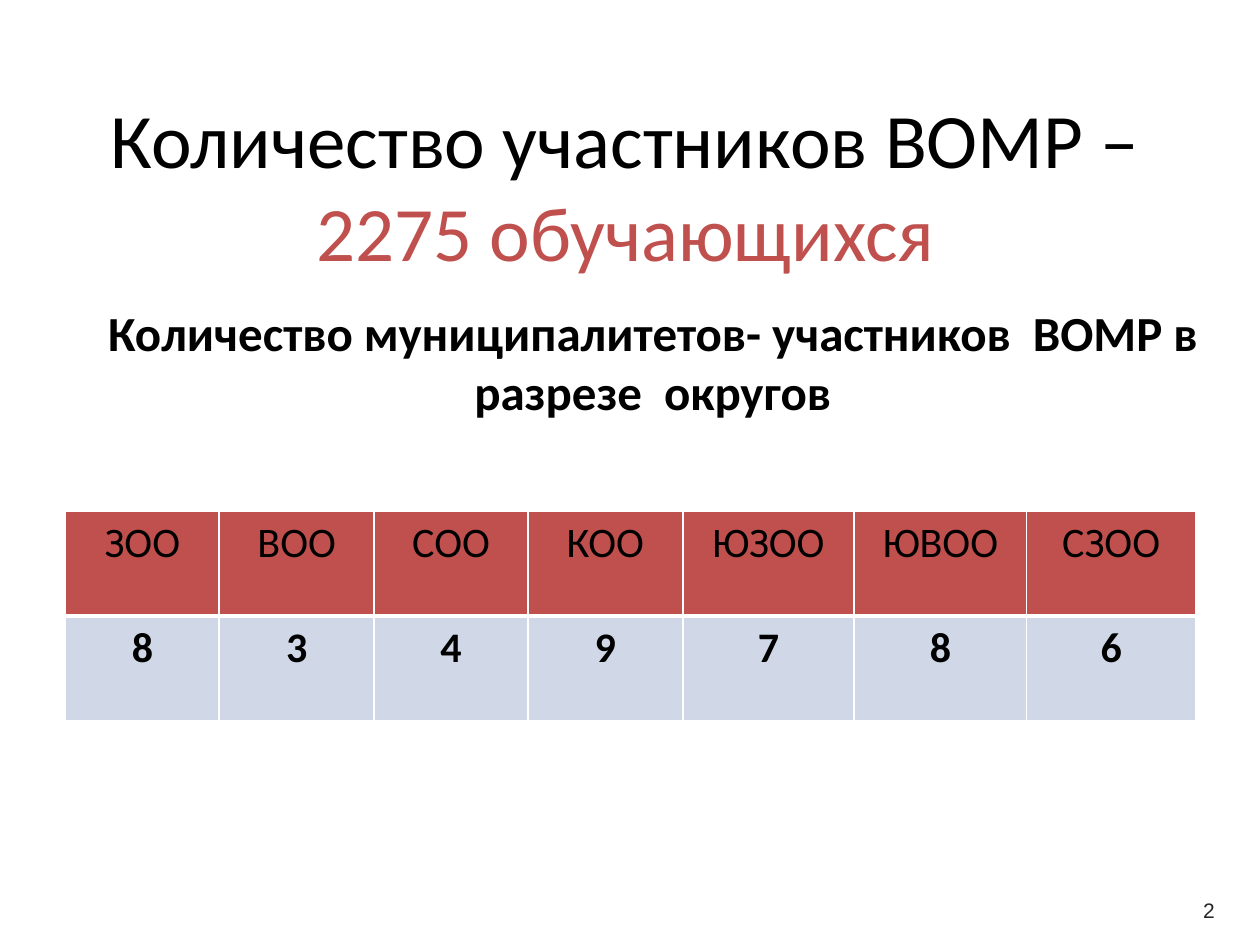
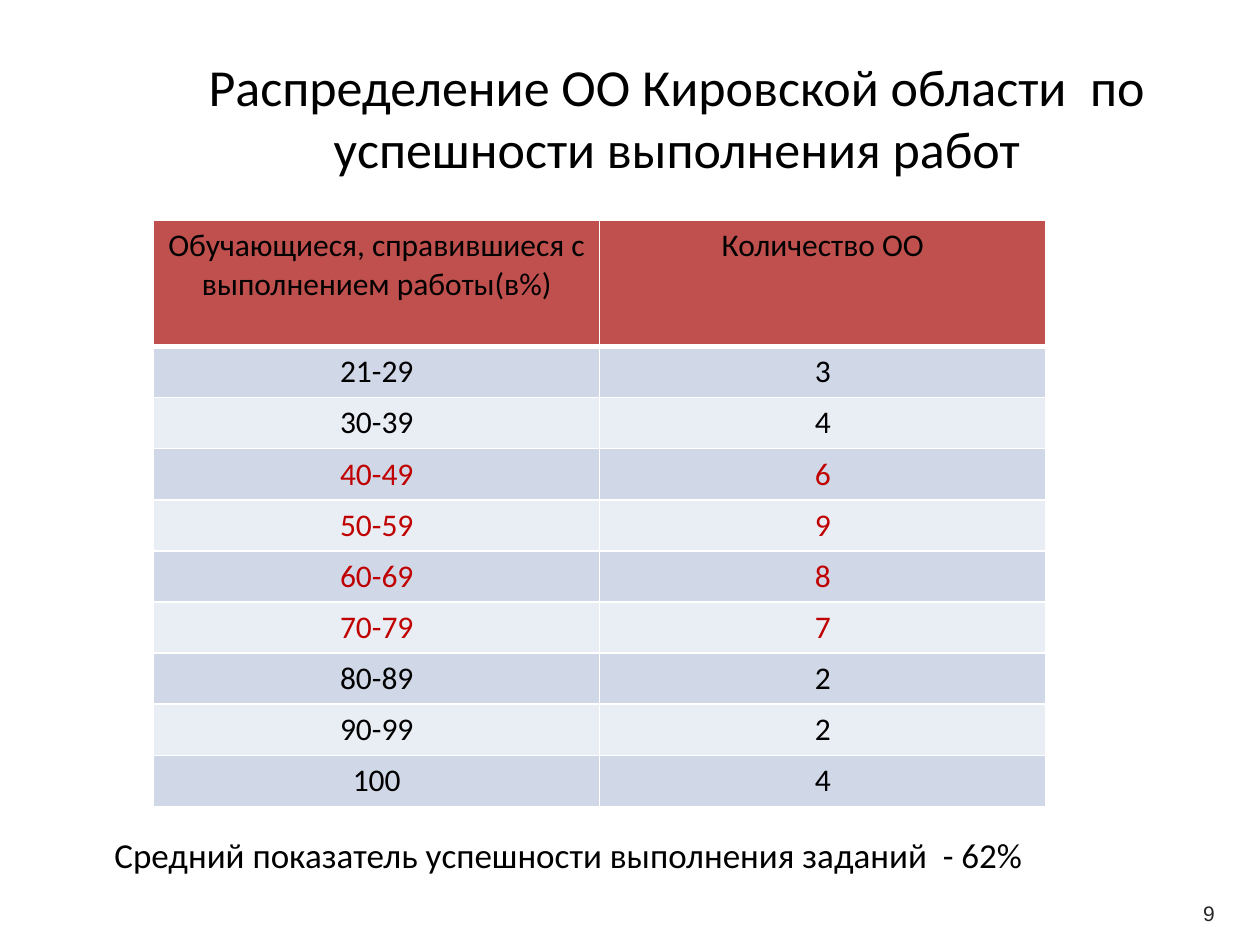
from lxml import etree
from pptx import Presentation
from pptx.dml.color import RGBColor
from pptx.enum import text
from pptx.oxml.ns import qn
from pptx.util import Inches, Pt

# Shared colours and fonts
BLACK = RGBColor(0x00, 0x00, 0x00)
WHITE = RGBColor(0xFF, 0xFF, 0xFF)
BRICK = RGBColor(0xC0, 0x50, 0x4D)
RED = RGBColor(0xC0, 0x00, 0x00)
GREY = RGBColor(0x26, 0x26, 0x26)
BANDS = (RGBColor(0xD0, 0xD8, 0xE8), RGBColor(0xE9, 0xED, 0xF4))
BODY_FONT = "Calibri"
NUMBER_FONT = "Arial"
TOP, MIDDLE, BOTTOM = (text.MSO_ANCHOR.TOP, text.MSO_ANCHOR.MIDDLE,
                       text.MSO_ANCHOR.BOTTOM)
LEFT, CENTER = text.PP_ALIGN.LEFT, text.PP_ALIGN.CENTER

# Content: participants by district
PARTICIPANTS_TITLE = [("Количество участников ВОМР – ", BLACK),
                      ("2275 обучающихся ", BRICK)]
DISTRICTS_HEADING = "Количество муниципалитетов- участников  ВОМР в разрезе  округов"
DISTRICTS = [("ЗОО", "8"), ("ВОО", "3"), ("СОО", "4"), ("КОО", "9"),
             ("ЮЗОО", "7"), ("ЮВОО", "8"), ("СЗОО", "6")]
DISTRICT_WIDTHS = [1.22, 1.23, 1.22, 1.23, 1.36, 1.37, 1.34]

# Content: schools by success rate
SUCCESS_TITLE = [("Распределение ОО Кировской области  по успешности выполнения работ",
                  BLACK)]
SUCCESS_HEADER = ("Обучающиеся, справившиеся с выполнением работы(в%)", "Количество ОО")
SUCCESS_RATES = [("21-29", "3"), ("30-39", "4"), ("40-49", "6"), ("50-59", "9"),
                 ("60-69", "8"), ("70-79", "7"), ("80-89", "2"), ("90-99", "2"),
                 ("100", "4")]
HIGHLIGHTED = {"40-49", "50-59", "60-69", "70-79"}
AVERAGE_NOTE = "Средний показатель успешности выполнения заданий  - 62%"


def add_span(para, words, size, color=BLACK, bold=False, font=BODY_FONT):
    span = para.add_run()
    span.text = words
    span.font.size = Pt(size)
    span.font.name = font
    span.font.bold = bold
    span.font.color.rgb = color


def set_title(page, place, lines, size):
    title = page.shapes.title
    title.left, title.top, title.width, title.height = map(Inches, place)
    frame = title.text_frame
    frame.word_wrap = True
    frame.auto_size = text.MSO_AUTO_SIZE.NONE
    frame.vertical_anchor = TOP
    para = frame.paragraphs[0]
    para.alignment = CENTER
    for index, (words, color) in enumerate(lines):
        if index:
            para.add_line_break()
        add_span(para, words, size, color)


def add_text(page, place, words, size, align=LEFT, anchor=TOP, **style):
    box = page.shapes.add_textbox(*map(Inches, place))
    frame = box.text_frame
    frame.word_wrap = True
    frame.vertical_anchor = anchor
    para = frame.paragraphs[0]
    para.alignment = align
    add_span(para, words, size, **style)


def add_page_number(page, top, number):
    add_text(page, (9.45, top, 0.51, 0.4), number, 12, anchor=MIDDLE,
             color=GREY, font=NUMBER_FONT)


def set_borders(cell, bottom):
    properties = cell._tc.get_or_add_tcPr()
    for side, width in (("L", 1), ("R", 1), ("T", 1), ("B", bottom)):
        line = etree.SubElement(properties, qn(f"a:ln{side}"), w=str(Pt(width)))
        fill = etree.SubElement(line, qn("a:solidFill"))
        etree.SubElement(fill, qn("a:srgbClr"), val=str(WHITE))


def add_banded_table(page, left, top, widths, heights, rows, size,
                     bold_body=False, highlighted=()):
    table = page.shapes.add_table(
        len(rows), len(widths), Inches(left), Inches(top),
        Inches(sum(widths)), Inches(sum(heights))).table
    for column, width in zip(table.columns, widths):
        column.width = Inches(width)
    for row_index, values in enumerate(rows):
        table.rows[row_index].height = Inches(heights[row_index])
        header = row_index == 0
        color = RED if values[0] in highlighted else BLACK
        for column_index, value in enumerate(values):
            cell = table.cell(row_index, column_index)
            set_borders(cell, bottom=3 if header else 1)
            cell.fill.solid()
            cell.fill.fore_color.rgb = BRICK if header else BANDS[(row_index - 1) % 2]
            para = cell.text_frame.paragraphs[0]
            para.alignment = CENTER
            add_span(para, value, size, color, bold_body and not header)


def build_participants(page):
    set_title(page, (0.29, 0.68, 9.49, 1.17), PARTICIPANTS_TITLE, 44)
    add_page_number(page, 7.02, "2")
    add_banded_table(page, 0.52, 4.06, DISTRICT_WIDTHS, [0.83] * 2,
                     list(zip(*DISTRICTS)), 24, bold_body=True)
    add_text(page, (0.75, 2.35, 8.86, 1.04), DISTRICTS_HEADING, 28,
             align=CENTER, bold=True)


def build_success_rates(page):
    set_title(page, (0.75, 0.38, 9.25, 0.97), SUCCESS_TITLE, 29.7)
    add_banded_table(page, 1.22, 1.75, [3.54] * 2, [1] + [0.4] * len(SUCCESS_RATES),
                     [SUCCESS_HEADER] + SUCCESS_RATES, 18, highlighted=HIGHLIGHTED)
    add_page_number(page, 7.05, "9")
    add_text(page, (0.81, 6.23, 8.56, 0.77), AVERAGE_NOTE, 20, anchor=BOTTOM)


def main():
    deck = Presentation()
    deck.slide_width, deck.slide_height = Inches(10), Inches(7.5)
    title_only = deck.slide_layouts[5]
    for build in (build_participants, build_success_rates):
        build(deck.slides.add_slide(title_only))
    deck.save("out.pptx")


if __name__ == "__main__":
    main()
